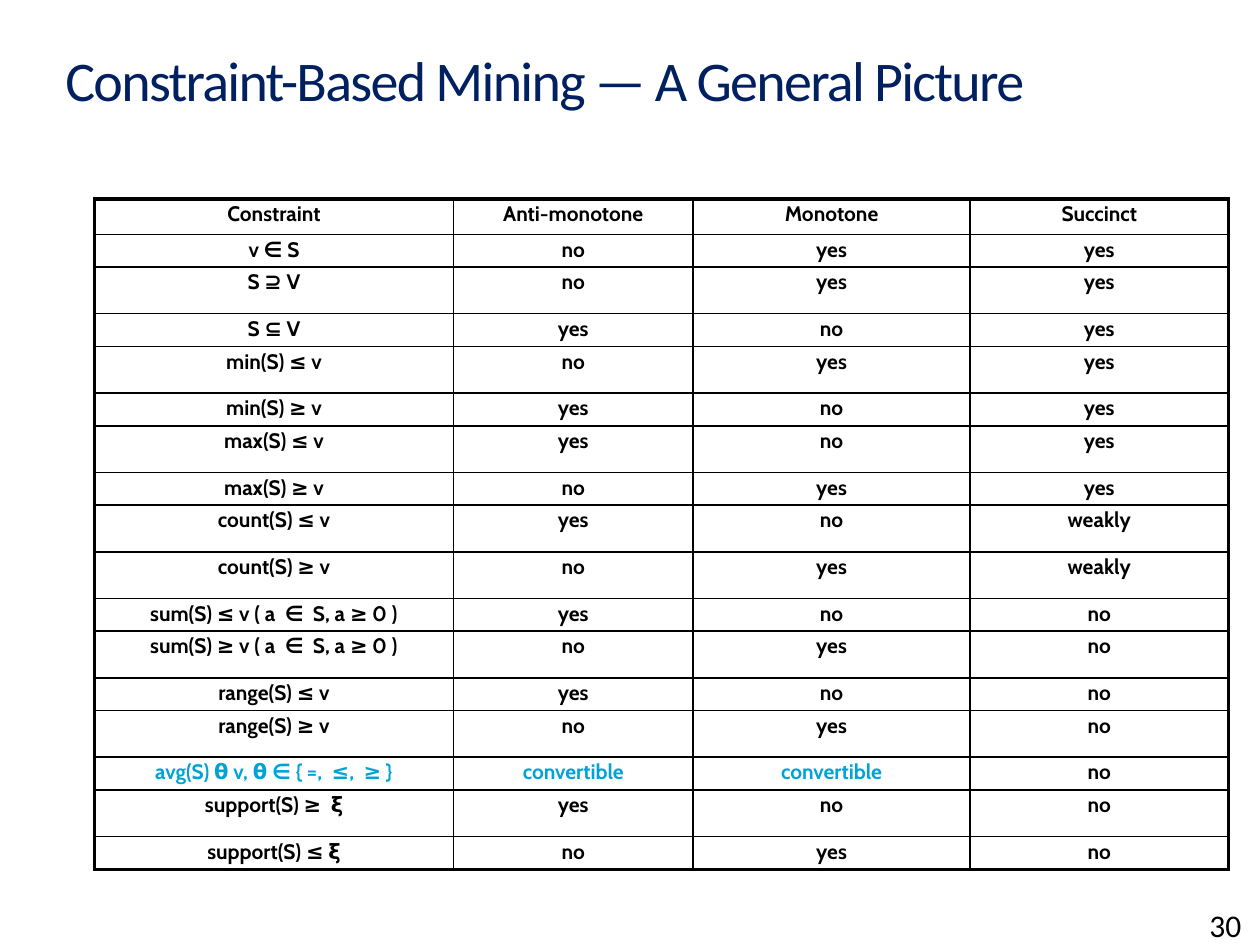
from pptx import Presentation
from pptx.dml.color import RGBColor
from pptx.enum.text import MSO_ANCHOR, PP_ALIGN
from pptx.oxml.ns import qn
from pptx.util import Inches, Pt
from lxml.etree import SubElement

COLORS = {"title": "002060", "text": "000000", "highlight": "00A3D6", "border": "000000"}
TITLE_FONT = "Calibri"
TABLE_FONT = "Cabin"

COLUMN_WIDTHS = [2.85, 1.9, 2.2, 2.05]
HEADER_HEIGHT, SHORT_HEIGHT, TALL_HEIGHT = 0.28, 0.26, 0.37
TALL_ROWS = {2, 4, 6, 8, 9, 11, 13, 15}
OUTER_BORDER, INNER_BORDER = 2.25, 1

CONSTRAINTS = [
    ("Constraint", "Anti-monotone", "Monotone", "Succinct"),
    ("v ∈ S", "no", "yes", "yes"),
    ("S ⊇ V", "no", "yes", "yes"),
    ("S ⊆ V", "yes", "no", "yes"),
    ("min(S) ≤ v", "no", "yes", "yes"),
    ("min(S) ≥ v", "yes", "no", "yes"),
    ("max(S) ≤ v", "yes", "no", "yes"),
    ("max(S) ≥ v", "no", "yes", "yes"),
    ("count(S) ≤ v", "yes", "no", "weakly"),
    ("count(S) ≥ v", "no", "yes", "weakly"),
    ("sum(S) ≤ v ( a  ∈  S, a ≥ 0 )", "yes", "no", "no"),
    ("sum(S) ≥ v ( a  ∈  S, a ≥ 0 )", "no", "yes", "no"),
    ("range(S) ≤ v", "yes", "no", "no"),
    ("range(S) ≥ v", "no", "yes", "no"),
    ("avg(S) θ v, θ ∈ { =,  ≤,  ≥ }", "convertible", "convertible", "no"),
    ("support(S) ≥  ξ", "yes", "no", "no"),
    ("support(S) ≤ ξ", "no", "yes", "no"),
]


def add_run(paragraph, text, font, size, color, bold=False):
    run = paragraph.add_run()
    run.text = text
    run.font.name = font
    run.font.size = Pt(size)
    run.font.bold = bold
    run.font.color.rgb = RGBColor.from_string(COLORS[color])
    return run


def add_text(slide, text, left, top, width, height, size, color, anchor):
    shape = slide.shapes.add_textbox(Inches(left), Inches(top), Inches(width), Inches(height))
    frame = shape.text_frame
    frame.word_wrap = True
    frame.vertical_anchor = anchor
    return add_run(frame.paragraphs[0], text, TITLE_FONT, size, color)


def set_borders(cell, widths):
    properties = cell._tc.get_or_add_tcPr()
    for side, width in widths.items():
        line = SubElement(properties, qn(f"a:ln{side}"), w=str(Pt(width)))
        fill = SubElement(line, qn("a:solidFill"))
        SubElement(fill, qn("a:srgbClr"), val=COLORS["border"])


def fill_cell(cell, text, color):
    paragraph = cell.text_frame.paragraphs[0]
    paragraph.alignment = PP_ALIGN.CENTER
    paragraph.line_spacing = 0.8
    add_run(paragraph, text, TABLE_FONT, 12, color, bold=True)


def row_height(row):
    if row == 0:
        return HEADER_HEIGHT
    return TALL_HEIGHT if row in TALL_ROWS else SHORT_HEIGHT


def add_constraint_table(slide, left, top):
    heights = [row_height(row) for row in range(len(CONSTRAINTS))]
    table = slide.shapes.add_table(
        len(heights), len(COLUMN_WIDTHS), Inches(left), Inches(top),
        Inches(sum(COLUMN_WIDTHS)), Inches(sum(heights)),
    ).table
    table.first_row = False
    table.horz_banding = False
    for column, width in zip(table.columns, COLUMN_WIDTHS):
        column.width = Inches(width)
    for row, height in zip(table.rows, heights):
        row.height = Inches(height)

    last_row, last_column = len(heights) - 1, len(COLUMN_WIDTHS) - 1
    for row, texts in enumerate(CONSTRAINTS):
        for column, text in enumerate(texts):
            cell = table.cell(row, column)
            # The convertible constraint stands out, apart from its last column
            highlighted = "convertible" in texts and column < last_column
            fill_cell(cell, text, "highlight" if highlighted else "text")
            # Heavy frame around the table, thin lines inside
            on_edge = {"L": column == 0, "R": column == last_column,
                       "T": row == 0, "B": row == last_row}
            set_borders(cell, {side: OUTER_BORDER if edge else INNER_BORDER
                               for side, edge in on_edge.items()})
            cell.fill.background()


def main():
    presentation = Presentation()
    presentation.slide_width = Inches(10)
    presentation.slide_height = Inches(7.5)
    slide = presentation.slides.add_slide(presentation.slide_layouts[6])

    # Title, with slightly tightened letters
    title = add_text(slide, "Constraint-Based Mining — A General Picture",
                     0.42, 0.25, 9.42, 0.75, 32, "title", MSO_ANCHOR.MIDDLE)
    title.font._element.set("spc", "-100")

    # Properties of each constraint
    add_constraint_table(slide, 0.75, 1.58)

    # Slide number
    add_text(slide, "30", 9.5, 7.14, 0.5, 0.36, 18, "text", MSO_ANCHOR.TOP)

    presentation.save("out.pptx")


if __name__ == "__main__":
    main()
